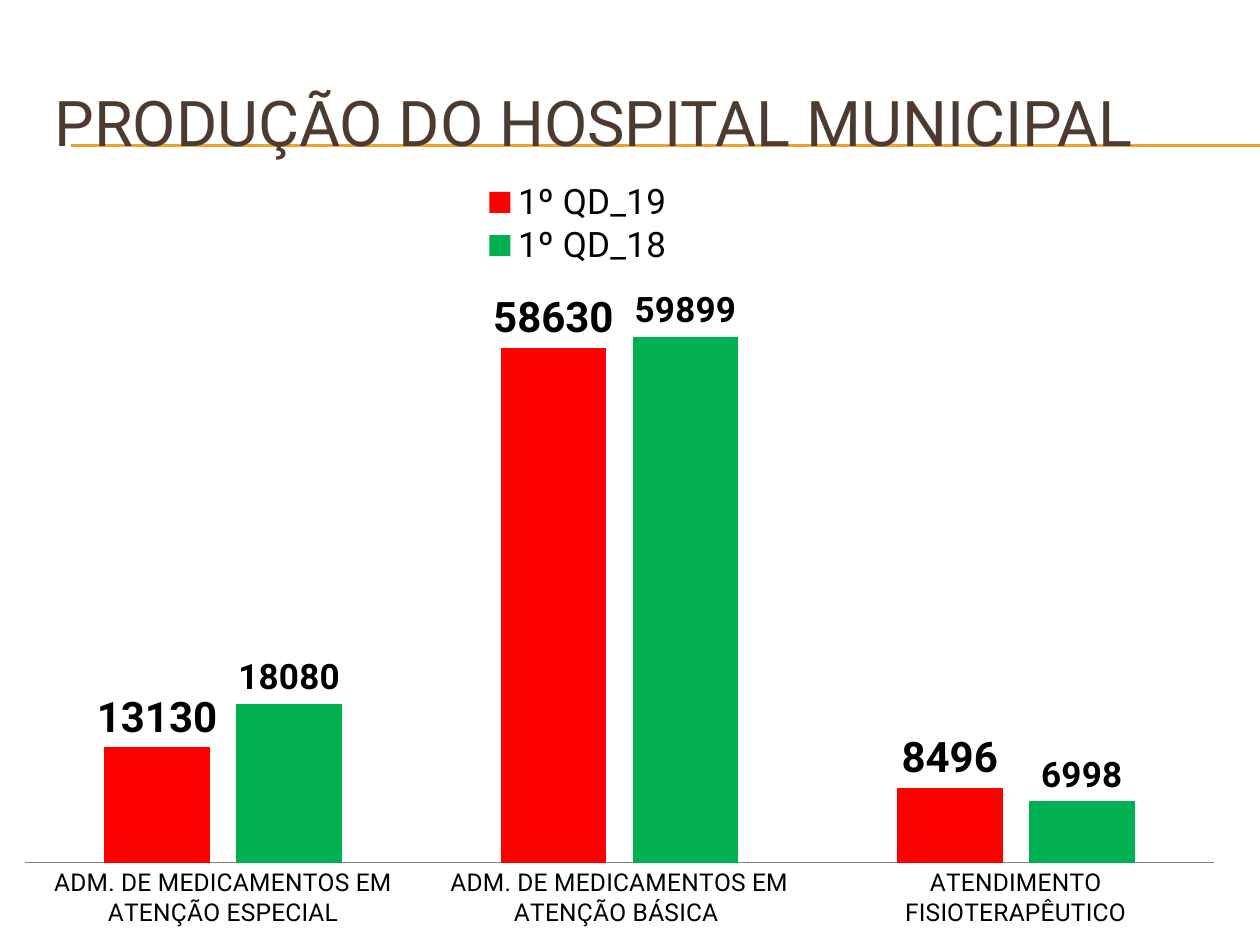
from lxml.etree import SubElement
from pptx import Presentation
from pptx.chart.data import CategoryChartData
from pptx.dml.color import RGBColor
from pptx.enum.chart import (XL_CHART_TYPE, XL_LABEL_POSITION,
                             XL_LEGEND_POSITION, XL_TICK_MARK)
from pptx.enum.shapes import MSO_CONNECTOR
from pptx.enum.text import MSO_ANCHOR
from pptx.oxml import parse_xml
from pptx.oxml.ns import nsdecls, qn
from pptx.util import Pt

PX = 914400 / 126
FONT = "Roboto"
BROWN = RGBColor(0x4E, 0x3B, 0x30)
AMBER = RGBColor(0xF0, 0xA2, 0x2E)
RED = RGBColor(0xFF, 0x00, 0x00)
GREEN = RGBColor(0x00, 0xB0, 0x50)
BLACK = RGBColor(0x00, 0x00, 0x00)
GRAY = RGBColor(0x80, 0x80, 0x80)

CATEGORIES = ["ADM. DE MEDICAMENTOS EM ATENÇÃO ESPECIAL",
              "ADM. DE MEDICAMENTOS EM ATENÇÃO BÁSICA ",
              "ATENDIMENTO FISIOTERAPÊUTICO"]
# Name, values, colour, label size
SERIES = [("1º QD_19", (13130, 58630, 8496), RED, 24),
          ("1º QD_18", (18080, 59899, 6998), GREEN, 20)]


def emu(*lengths):
    return [round(length * PX) for length in lengths]


def style_font(font, size, color=BLACK, bold=False):
    font.name = FONT
    font.size = Pt(size)
    font.bold = bold
    font.color.rgb = color


def add_title(page, left, top, width, height):
    # Double rule running from the title to the right edge
    for y in (top + 82, top + 83):
        rule = page.shapes.add_connector(
            MSO_CONNECTOR.STRAIGHT, *emu(left + 29, y, 1260, y))
        rule.line.color.rgb = AMBER
        rule.line.width = Pt(0.75)
        SubElement(rule.element.spPr, qn("a:effectLst"))

    # Title text
    box = page.shapes.add_textbox(*emu(left, top, width, height))
    frame = box.text_frame
    frame.word_wrap = True
    frame.vertical_anchor = MSO_ANCHOR.MIDDLE
    span = frame.paragraphs[0].add_run()
    span.text = "PRODUÇÃO DO HOSPITAL MUNICIPAL"
    style_font(span.font, 36, BROWN)


def place(part, index, frame, area, inner=False):
    """Fix a chart part at an area in px, relative to the chart frame."""
    for old in part.findall(qn("c:layout")):
        part.remove(old)
    target = '<c:layoutTarget val="inner"/>' if inner else ""
    modes = "".join(f'<c:{key}Mode val="edge"/>' for key in "xy")
    sizes = "".join(f'<c:{key} val="{length / frame[i % 2]:.4f}"/>'
                    for i, (key, length) in enumerate(zip("xywh", area)))
    part.insert(index, parse_xml(
        f'<c:layout {nsdecls("c")}><c:manualLayout>{target}{modes}{sizes}'
        '</c:manualLayout></c:layout>'))


def add_production_chart(page, left, top, width, height):
    data = CategoryChartData()
    data.categories = CATEGORIES
    for name, values, _, _ in SERIES:
        data.add_series(name, values)
    chart = page.shapes.add_chart(
        XL_CHART_TYPE.COLUMN_CLUSTERED,
        *emu(left, top, width, height), data).chart
    style_font(chart.font, 10)
    chart.has_title = False

    # Axes
    chart.value_axis.visible = False
    chart.value_axis.has_major_gridlines = False
    chart.value_axis.minimum_scale = 0
    chart.value_axis.maximum_scale = 70000
    axis = chart.category_axis
    axis.major_tick_mark = XL_TICK_MARK.NONE
    axis.format.line.color.rgb = GRAY
    style_font(axis.tick_labels.font, 14)

    # Columns and their labels
    plot = chart.plots[0]
    plot.vary_by_categories = False
    plot.gap_width = 150
    plot.overlap = -25
    for series, (_, _, color, size) in zip(plot.series, SERIES):
        series.format.fill.solid()
        series.format.fill.fore_color.rgb = color
        labels = series.data_labels
        labels.show_value = True
        labels.position = XL_LABEL_POSITION.OUTSIDE_END
        style_font(labels.font, size, bold=True)

    # Legend stacked above the middle columns
    chart.has_legend = True
    legend = chart.legend
    legend.position = XL_LEGEND_POSITION.TOP
    legend.include_in_layout = False
    style_font(legend.font, 20)

    frame = (width, height)
    plot_area = chart.element.find(".//" + qn("c:plotArea"))
    legend_part = chart.element.find(".//" + qn("c:legend"))
    place(plot_area, 0, frame, (25, 80, 1189, 615), inner=True)
    place(legend_part, 1, frame, (482, 12, 192, 88))


def main():
    deck = Presentation()
    deck.slide_width, deck.slide_height = emu(1260, 945)
    page = deck.slides.add_slide(deck.slide_layouts[6])
    add_title(page, 42, 63, 1197, 116)
    add_production_chart(page, 0, 168, 1239, 777)
    deck.save("out.pptx")


if __name__ == "__main__":
    main()
